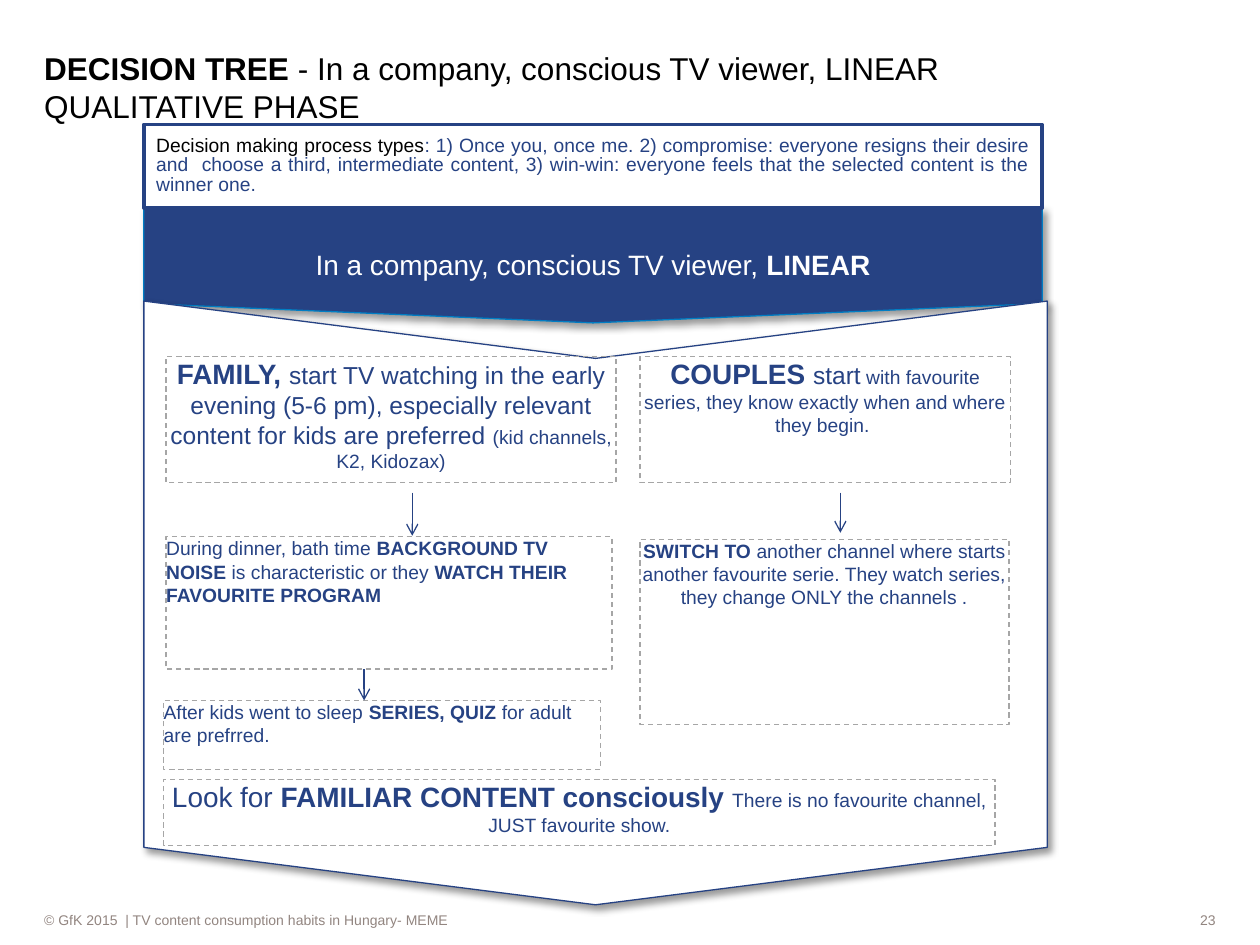
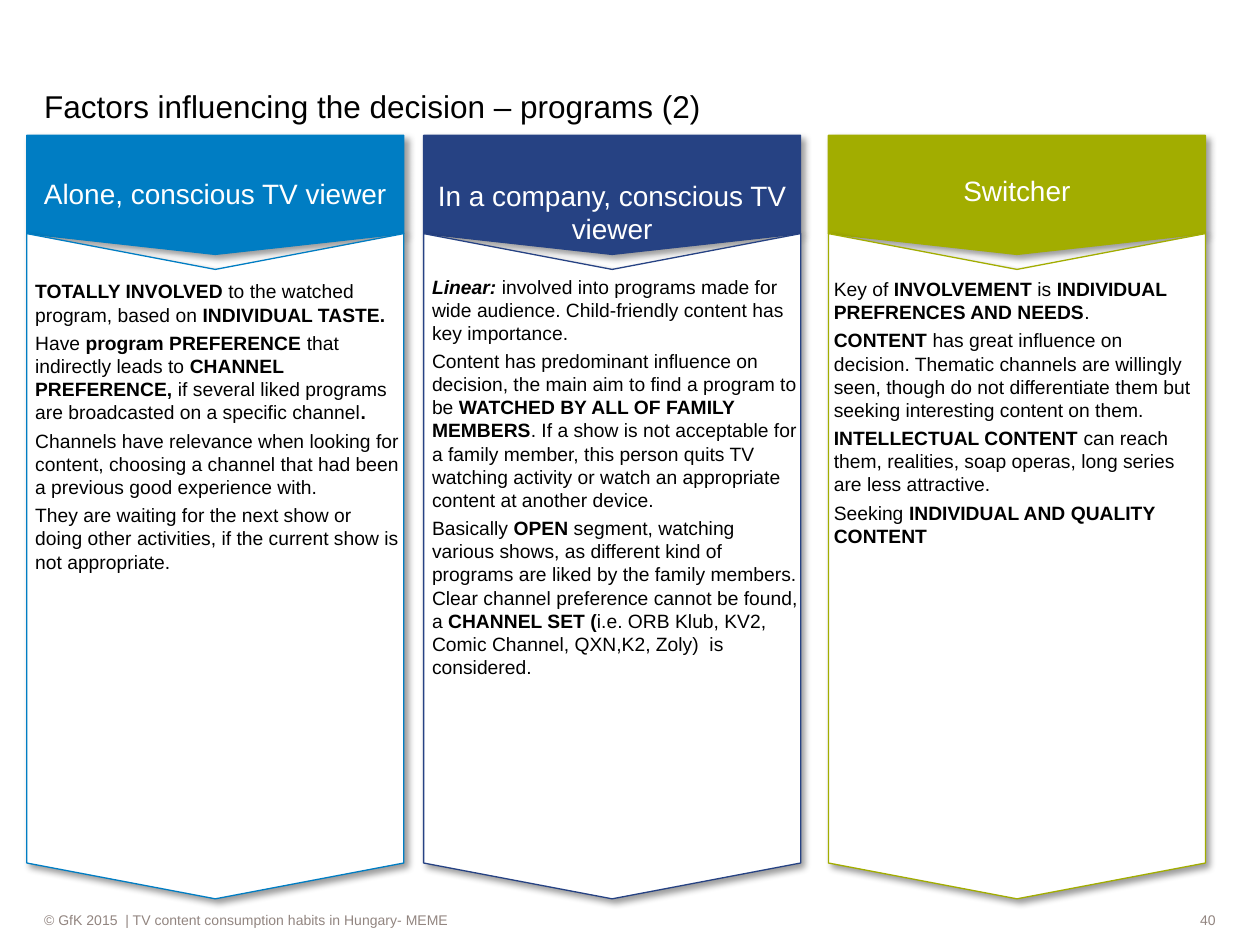
from lxml import etree
from pptx import Presentation
from pptx.dml.color import RGBColor
from pptx.enum.dml import MSO_LINE
from pptx.enum.shapes import MSO_CONNECTOR, MSO_SHAPE
from pptx.enum.text import MSO_ANCHOR, MSO_AUTO_SIZE, PP_ALIGN
from pptx.oxml.ns import qn
from pptx.util import Cm, Pt

LEFT, CENTER, RIGHT, JUSTIFY = PP_ALIGN.LEFT, PP_ALIGN.CENTER, PP_ALIGN.RIGHT, PP_ALIGN.JUSTIFY
TOP, MIDDLE, BOTTOM = MSO_ANCHOR.TOP, MSO_ANCHOR.MIDDLE, MSO_ANCHOR.BOTTOM
RECTANGLE, CHEVRON = MSO_SHAPE.RECTANGLE, MSO_SHAPE.CHEVRON
STRAIGHT, DASH = MSO_CONNECTOR.STRAIGHT, MSO_LINE.DASH
NO_AUTOFIT = MSO_AUTO_SIZE.NONE

FONT = "Arial"
NAVY, BLUE, GREEN = "264283", "007DC3", "A2AD00"
BLACK, WHITE, GREY, TAUPE = "000000", "FFFFFF", "A6A6A6", "928580"


def write_text(frame, paragraphs, size=11, color=BLACK, align=LEFT, anchor=TOP,
               margins=(0, 0, 0, 0), gap=3, leading=None):
    """A paragraph lists strings or (string, overrides); ** switches bold."""
    frame.word_wrap = True
    frame.auto_size = NO_AUTOFIT
    frame.vertical_anchor = anchor
    (frame.margin_left, frame.margin_top,
     frame.margin_right, frame.margin_bottom) = [Cm(m) for m in margins]
    for number, pieces in enumerate(paragraphs):
        paragraph = frame.add_paragraph() if number else frame.paragraphs[0]
        paragraph.alignment = align
        if number:
            paragraph.space_before = Pt(gap)
        if leading:
            paragraph.line_spacing = Pt(leading)
        for piece in pieces:
            marked, own = (piece, {}) if isinstance(piece, str) else piece
            for part, words in enumerate(marked.split("**")):
                for row, line in enumerate(words.split("\n")):
                    if row:
                        paragraph.add_line_break()
                    if not line:
                        continue
                    run = paragraph.add_run()
                    run.text = line
                    run.font.name = FONT
                    run.font.size = Pt(own.get("size", size))
                    run.font.bold = part % 2 == 1
                    run.font.italic = own.get("italic", False)
                    run.font.color.rgb = RGBColor.from_string(own.get("color", color))


def paint(shape, fill=None, line=NAVY, weight=0.75, dash=None, shadow=False):
    if fill:
        shape.fill.solid()
        shape.fill.fore_color.rgb = RGBColor.from_string(fill)
    else:
        shape.fill.background()
    shape.line.color.rgb = RGBColor.from_string(line)
    shape.line.width = Pt(weight)
    if dash:
        shape.line.dash_style = dash
    shape.shadow.inherit = False
    if shadow:
        effects = shape._element.spPr.find(qn("a:effectLst"))
        outer = etree.SubElement(effects, qn("a:outerShdw"), blurRad=str(Pt(4)),
                                 dist=str(Pt(3)), dir="2700000", algn="tl", rotWithShape="0")
        black = etree.SubElement(outer, qn("a:srgbClr"), val=BLACK)
        etree.SubElement(black, qn("a:alpha"), val="40000")


prs = Presentation()
prs.slide_width, prs.slide_height = Cm(25.4), Cm(19.05)

# Titles and footers
FOOTER = "© GfK 2015  | TV content consumption habits in Hungary- MEME"
pages = [
    ("**DECISION TREE **- In a company, conscious TV viewer, LINEAR\nQUALITATIVE PHASE", 21.41, "23"),
    ("Factors influencing the decision – programs (2)", 17.6, "40"),
]
for heading, title_width, page_number in pages:
    slide = prs.slides.add_slide(prs.slide_layouts[5])
    title = slide.shapes.title
    title.left, title.top, title.width, title.height = Cm(0.89), Cm(0.71), Cm(title_width), Cm(1.8)
    write_text(title.text_frame, [[heading]], size=18, anchor=BOTTOM)
    for words, left, width, align in [(FOOTER, 0.89, 19.61, LEFT), (page_number, 20.9, 3.61, RIGHT)]:
        footer = slide.shapes.add_textbox(Cm(left), Cm(18.34), Cm(width), Cm(0.41))
        write_text(footer.text_frame, [[words]], size=8, color=TAUPE, align=align, anchor=MIDDLE)
tree, factors = prs.slides

# Banners with a pointed lower edge, each above a chevron turned to point down
wide = dict(top=4.19, width=18.11, side=1.93, tip=2.32, body_top=6.07, body_width=18.21, body_height=12.17)
narrow = dict(top=2.73, width=7.6, side=1.98, tip=2.4, body_top=4.71, body_width=7.6, body_height=13.41)
banners = [
    (tree, wide, 2.9, NAVY, BLUE, "In a company, conscious TV viewer, **LINEAR**", 0.25),
    (factors, narrow, 0.54, BLUE, BLUE, "Alone, conscious TV viewer", 0.25),
    (factors, narrow, 8.54, NAVY, NAVY, "In a company, conscious TV viewer", 0.99),
    (factors, narrow, 16.7, GREEN, GREEN, "Switcher", 0.13),
]
for slide, form, left, color, edge, segment, inset in banners:
    right, top = left + form["width"], form["top"]
    corners = [(left, top), (left, top + form["side"]),
               (left + form["width"] / 2, top + form["tip"]), (right, top + form["side"])]
    outline = slide.shapes.build_freeform(Cm(right), Cm(top))
    outline.add_line_segments([(Cm(x), Cm(y)) for x, y in corners], close=True)
    banner = outline.convert_to_shape()
    paint(banner, color, edge, shadow=True)
    write_text(banner.text_frame, [[segment]], size=16, color=WHITE, align=CENTER,
               anchor=MIDDLE, margins=(0.25, inset, 0.25, 0.3))

    # Length and breadth swap places because of the quarter turn
    length, breadth = form["body_height"], form["body_width"]
    shift = (length - breadth) / 2
    body = slide.shapes.add_shape(CHEVRON, Cm(left - shift), Cm(form["body_top"] + shift),
                                  Cm(length), Cm(breadth))
    body.rotation = 90
    body.adjustments[0] = 0.095
    paint(body, WHITE, color if slide is factors else NAVY, shadow=True)

# Decision tree: dashed steps
BIG, MID = dict(size=16), dict(size=14)
steps = [
    (3.35, 7.19, 9.07, 2.54, CENTER, [
        ("**FAMILY, **", BIG),
        ("start TV watching in the early evening (5-6 pm), especially relevant "
         "content for kids are preferred ", MID),
        "(kid channels, K2, Kidozax)"]),
    (12.9, 7.19, 7.47, 2.54, CENTER, [
        ("**COUPLES **", BIG), ("start", MID),
        " with favourite series, they know exactly when and where they begin. "]),
    (3.35, 10.82, 8.99, 2.67, LEFT, [
        "During dinner, bath time **BACKGROUND TV NOISE **is characteristic or they "
        "**WATCH THEIR  FAVOURITE PROGRAM**"]),
    (3.3, 14.12, 8.81, 1.4, LEFT, [
        "After kids went to sleep **SERIES, QUIZ **for adult are prefrred."]),
    (12.9, 10.87, 7.44, 3.73, CENTER, [
        "**SWITCH TO **another channel where starts another favourite serie. "
        "They watch series, they change ONLY the channels ."]),
    (3.3, 15.72, 16.76, 1.32, CENTER, [
        ("Look for **FAMILIAR CONTENT consciously **", BIG),
        "There is no favourite channel, JUST favourite show."]),
]
for left, top, width, height, align, words in steps:
    step = tree.shapes.add_shape(RECTANGLE, Cm(left), Cm(top), Cm(width), Cm(height))
    paint(step, line=GREY, dash=DASH)
    write_text(step.text_frame, [words], color=NAVY, align=align)

# Arrows between the steps
for x, start, end in [(8.31, 9.93, 10.8), (7.34, 13.49, 14.12), (16.94, 9.93, 10.74)]:
    arrow = tree.shapes.add_connector(STRAIGHT, Cm(x), Cm(start), Cm(x), Cm(end))
    arrow.line.color.rgb = RGBColor.from_string(NAVY)
    arrow.line.width = Pt(0.75)
    properties = arrow._element.spPr
    etree.SubElement(properties.find(qn("a:ln")), qn("a:tailEnd"), type="arrow")
    etree.SubElement(properties, qn("a:effectLst"))

# Decision making process types
process_types = tree.shapes.add_shape(RECTANGLE, Cm(2.9), Cm(2.51), Cm(18.11), Cm(1.68))
paint(process_types, WHITE, NAVY, weight=2)
write_text(process_types.text_frame, [[
    ("Decision making process types", dict(color=BLACK)),
    ": 1) Once you, once me. 2) compromise: everyone resigns their desire and  choose a third, "
    "intermediate content, 3) win-win: everyone feels that the selected content is the winner one.",
]], color=NAVY, align=JUSTIFY, anchor=MIDDLE, margins=(0.25, 0.13, 0.25, 0.13), leading=11)

# Factors for each segment
segment_factors = [
    (0.71, 5.64, [
        ["**TOTALLY INVOLVED **to the watched program, based on** INDIVIDUAL TASTE.**"],
        ["Have** program PREFERENCE **that indirectly leads to** CHANNEL PREFERENCE, **"
         "if several liked programs are broadcasted on a specific channel**.**"],
        ["Channels have relevance when looking for content, choosing a channel that had been "
         "a previous good experience with."],
        ["They are waiting for the next show or doing other activities, if the current show is "
         "not appropriate."]]),
    (8.71, 5.54, [
        [("**Linear: **", dict(italic=True)),
         "involved into programs made for wide audience. Child-friendly content has key importance."],
        ["Content has predominant influence on decision, the main aim to find a program to be "
         "**WATCHED BY ALL OF FAMILY MEMBERS**. If a show is not acceptable for a family member, "
         "this person quits TV watching activity or watch an appropriate content at another device."],
        ["Basically **OPEN** segment, watching various shows, as different kind of programs are "
         "liked by the family members. Clear channel preference cannot be found, a "
         "**CHANNEL SET (**i.e. ORB Klub, KV2, Comic Channel, QXN,K2, Zoly)  is considered."]]),
    (16.81, 5.59, [
        ["Key of **INVOLVEMENT** is **INDIVIDUAL PREFRENCES AND NEEDS**."],
        ["**CONTENT **has great influence on decision. Thematic channels are willingly seen, "
         "though do not differentiate them but seeking interesting content on them."],
        ["**INTELLECTUAL CONTENT** can reach them, realities, soap operas, long series are "
         "less attractive."],
        ["Seeking **INDIVIDUAL AND QUALITY CONTENT**"]]),
]
for left, top, paragraphs in segment_factors:
    influences = factors.shapes.add_textbox(Cm(left), Cm(top), Cm(7.39), Cm(11.9))
    write_text(influences.text_frame, paragraphs)

prs.save("out.pptx")
